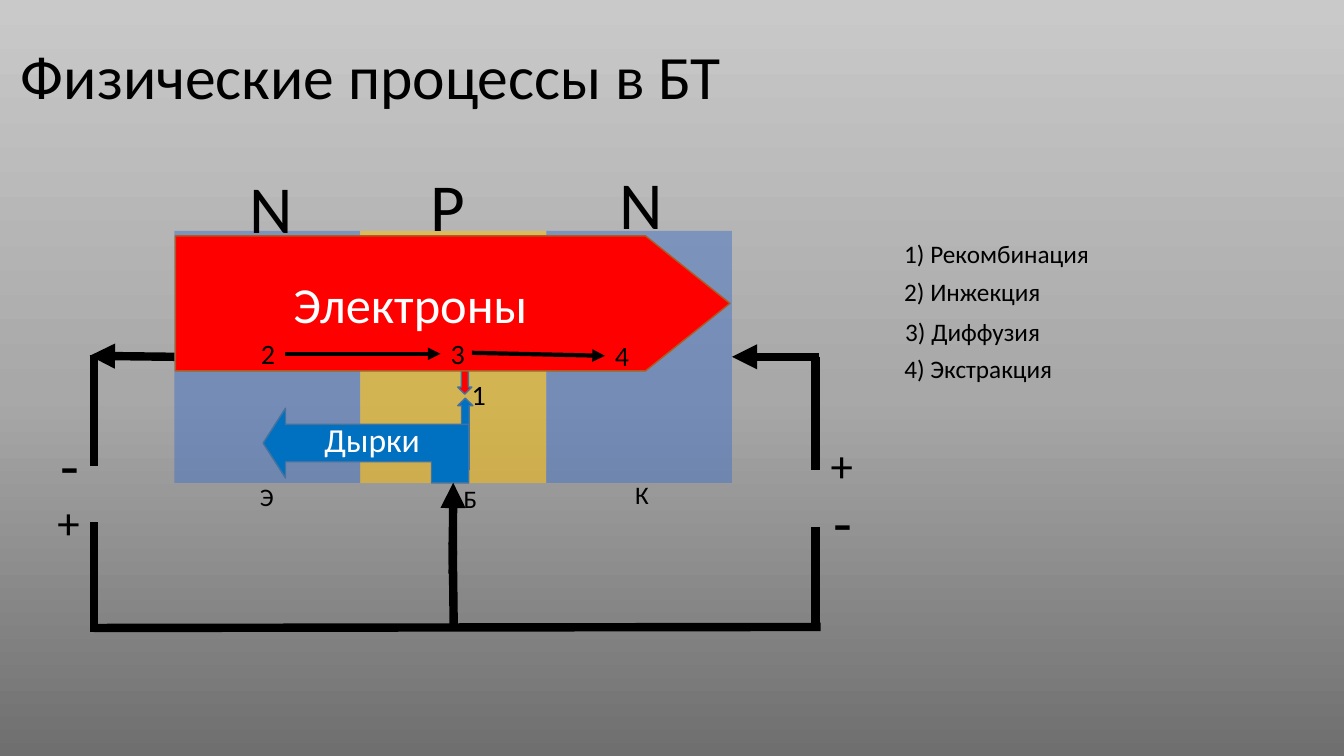
from copy import deepcopy

from pptx import Presentation
from pptx import util as u
from pptx.dml.color import RGBColor
from pptx.enum import shapes, text
from pptx.oxml.ns import qn
from lxml import etree

COLORS = {
    "black": "000000", "white": "FFFFFF", "red": "FF0000", "blue": "0070C0",
    "n_region": "4472C4", "p_region": "FFC000",
    "blue_edge": "43739E", "orange_edge": "AF5C24",
    "dark": "6F6F6F", "middle": "A8A8A8", "light": "C9C9C9",
}
RGB = {name: RGBColor.from_string(value) for name, value in COLORS.items()}

presentation = Presentation()
presentation.slide_width = u.Inches(13.33)
presentation.slide_height = u.Inches(7.5)
slide = presentation.slides.add_slide(presentation.slide_layouts[6])


def add_label(words, left, top, width, height, size, color="black", wrap=False):
    box = slide.shapes.add_textbox(*map(u.Inches, (left, top, width, height)))
    frame = box.text_frame
    frame.word_wrap = wrap
    frame.auto_size = text.MSO_AUTO_SIZE.SHAPE_TO_FIT_TEXT
    run = frame.paragraphs[0].add_run()
    run.text = words
    run.font.name = "Calibri"
    run.font.size = u.Pt(size)
    run.font.color.rgb = RGB[color]
    return box


def add_wire(start, end, width=6, arrow=False):
    wire = slide.shapes.add_connector(
        shapes.MSO_CONNECTOR.STRAIGHT, *map(u.Inches, start + end))
    wire.line.color.rgb = RGB["black"]
    wire.line.width = u.Pt(width)
    if arrow:
        etree.SubElement(wire.line._get_or_add_ln(), qn("a:tailEnd"), type="triangle")
    etree.SubElement(wire._element.spPr, qn("a:effectLst"))
    return wire


background = slide.background.fill
background.gradient()
background.gradient_angle = 90
stop_list = slide._element.find(".//" + qn("a:gsLst"))
stop_list.insert(1, deepcopy(stop_list[0]))
for stop, position, name in zip(background.gradient_stops, (0, 0.48, 1),
                                ("dark", "middle", "light")):
    stop.position = position
    stop.color.rgb = RGB[name]

title = add_label("Физические процессы в БТ", 0.11, 0.06, 11.5, 1.45, 44, wrap=True)
title.text_frame.auto_size = text.MSO_AUTO_SIZE.NONE
title.text_frame.vertical_anchor = text.MSO_ANCHOR.MIDDLE
title.text_frame.paragraphs[0].line_spacing = 0.9

regions = []
for index, name in enumerate(("n_region", "p_region", "n_region")):
    region = slide.shapes.add_shape(
        shapes.MSO_SHAPE.RECTANGLE, u.Inches(1.73 + 1.845 * index), u.Inches(2.29),
        u.Inches(1.84), u.Inches(2.5))
    region.shadow.inherit = False
    region.fill.solid()
    region.fill.fore_color.rgb = RGB[name]
    color = region._element.spPr.find(".//" + qn("a:srgbClr"))
    etree.SubElement(color, qn("a:alpha"), val="50000")
    region.line.fill.background()
    regions.append(region)
emitter, base, collector = regions

arrows = [
    (shapes.MSO_SHAPE.DOWN_ARROW, 4.54, 3.37, 0.14, 0.54, 0, (), "red", "blue_edge", ""),
    (shapes.MSO_SHAPE.RIGHT_ARROW, 1.74, 2.34, 5.5, 1.34, 0, (1, 0.625),
     "red", "orange_edge", "Электроны"),
    (shapes.MSO_SHAPE.UP_ARROW, 4.54, 3.95, 0.15, 0.71, 0, (), "blue", "blue_edge", ""),
    (shapes.MSO_SHAPE.BENT_UP_ARROW, 3.26, 3.4, 0.74, 2.04, 270, (0.5, 0.467, 0.3),
     "blue", "blue_edge", ""),
]
for kind, left, top, width, height, angle, adjustments, fill, edge, words in arrows:
    arrow = slide.shapes.add_shape(kind, *map(u.Inches, (left, top, width, height)))
    arrow.shadow.inherit = False
    arrow.rotation = angle
    for index, value in enumerate(adjustments):
        arrow.adjustments[index] = value
    arrow.fill.solid()
    arrow.fill.fore_color.rgb = RGB[fill]
    arrow.line.color.rgb = RGB[edge]
    arrow.line.width = u.Pt(1)
    if words:
        arrow.text_frame.vertical_anchor = text.MSO_ANCHOR.MIDDLE
        paragraph = arrow.text_frame.paragraphs[0]
        paragraph.alignment = text.PP_ALIGN.CENTER
        run = paragraph.add_run()
        run.text = words
        run.font.name = "Calibri"
        run.font.size = u.Pt(36)
        run.font.color.rgb = RGB["white"]

collector_wire = add_wire((8.12, 3.54), (7.26, 3.54), arrow=True)
collector_wire.end_connect(collector, 3)
emitter_wire = add_wire((1.73, 3.54), (0.89, 3.53), arrow=True)
emitter_wire.begin_connect(emitter, 1)
base_wire = add_wire((4.49, 5.69), (4.49, 4.79), arrow=True)
base_wire.end_connect(base, 2)

for start, end in (
    ((0.93, 3.52), (0.93, 4.62)),
    ((0.93, 5.18), (0.93, 6.27)),
    ((0.93, 6.23), (8.14, 6.22)),
    ((4.49, 5.38), (4.5, 6.22)),
    ((8.09, 3.54), (8.09, 4.66)),
    ((8.09, 5.23), (8.09, 6.25)),
):
    add_wire(start, end)

add_wire((2.83, 3.51), (4.37, 3.51), 3, True)
add_wire((4.68, 3.5), (6, 3.53), 3, True)

add_label("Дырки", 3.12, 4.11, 1.16, 0.5, 24, "white")

label_groups = [
    (48, 0.91, [("N", 2.38, 1.6, 0.64), ("P", 4.17, 1.58, 0.55), ("N", 6.05, 1.56, 0.64)]),
    (18, 0.4, [("Э", 2.48, 4.73, 0.34), ("Б", 4.5, 4.75, 0.34), ("К", 6.2, 4.71, 0.34),
               ("1) Рекомбинация", 8.87, 2.32, 2.1), ("2) Инжекция", 8.87, 2.69, 1.57),
               ("3) Диффузия", 8.88, 3.09, 1.56), ("4) Экстракция", 8.87, 3.46, 1.69)]),
    (20, 0.44, [("1", 4.58, 3.7, 0.34), ("2", 2.49, 3.29, 0.34),
                ("3", 4.37, 3.29, 0.34), ("4", 6, 3.31, 0.34)]),
    (32, 0.64, [("+", 0.47, 4.86, 0.43), ("+", 8.14, 4.29, 0.43)]),
    (44, 0.84, [("-", 0.5, 4.19, 0.39), ("-", 8.17, 4.75, 0.39)]),
]
for size, height, labels in label_groups:
    for words, left, top, width in labels:
        add_label(words, left, top, width, height, size)

presentation.save("out.pptx")
